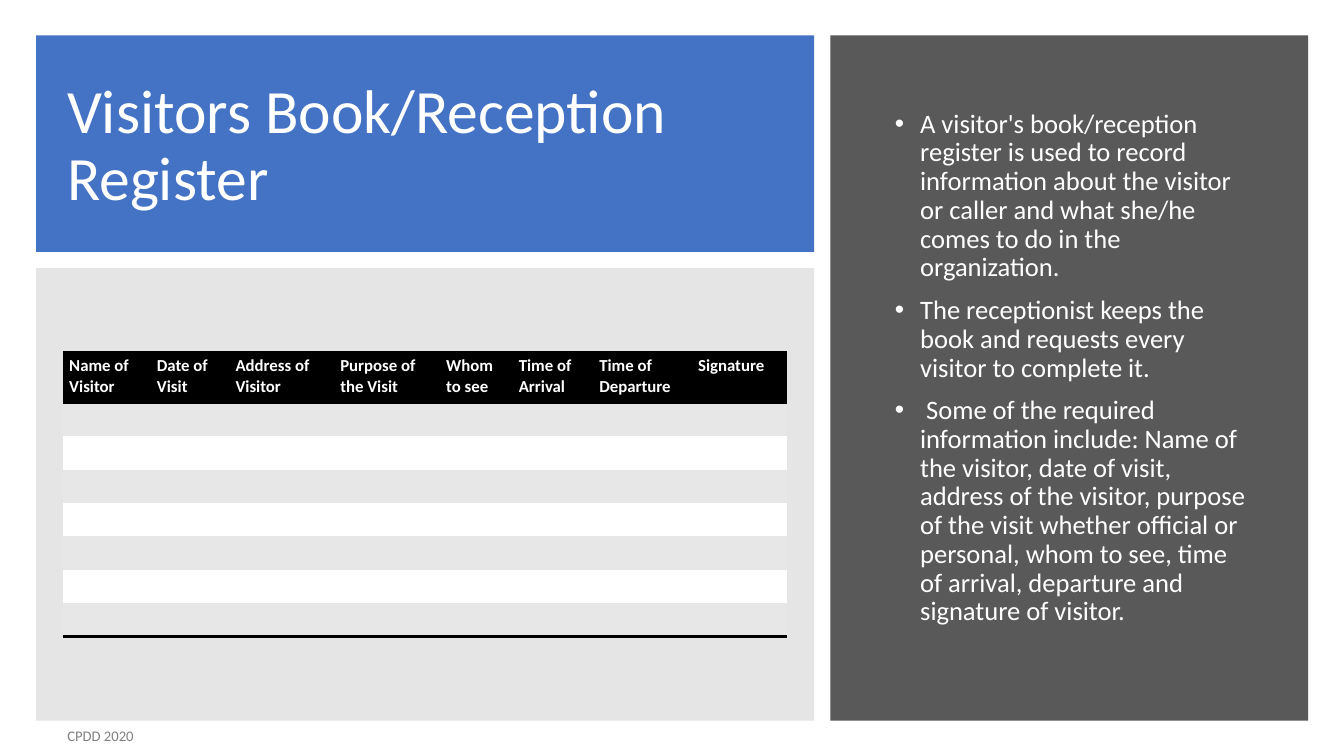
import lxml.etree
import pptx
import pptx.dml.color
import pptx.enum.shapes
import pptx.enum.text
import pptx.oxml.ns
import pptx.util

Cm = pptx.util.Cm
Pt = pptx.util.Pt
qn = pptx.oxml.ns.qn

COLORS = {"blue": "4472C4", "panel": "7F7F7F", "dark": "595959", "white": "FFFFFF",
          "black": "000000", "band": "E7E7E7", "footer": "808080"}
FONT = "Calibri"
NO_STYLE = "{2D5ABB26-0587-4C30-8999-92F81FD0307C}"

COLUMNS = [("Name of Visitor", 2.21), ("Date of Visit", 1.98), ("Address of Visitor", 2.64),
           ("Purpose of the Visit", 2.67), ("Whom to see", 1.83), ("Time of Arrival", 2.03),
           ("Time of Departure", 2.49), ("Signature", 2.41)]
EMPTY_ROWS = 7
HEADER_HEIGHT, ROW_HEIGHT = 1.27, 0.84

POINTS = [
    "A visitor's book/reception register is used to record information about the visitor or caller "
    "and what she/he comes to do in the organization.",
    "The receptionist keeps the book and requests every visitor to complete it.",
    " Some of the required information include: Name of the visitor, date of visit, address of the "
    "visitor, purpose of the visit whether official or personal, whom to see, time of arrival, "
    "departure and signature of visitor.",
]


def rgb(name):
    """Return the named colour."""
    return pptx.dml.color.RGBColor.from_string(COLORS[name])


def set_font(paragraph, size, color, bold=False):
    """Set the font of a whole paragraph."""
    font = paragraph.font
    font.name, font.size, font.bold = FONT, Pt(size), bold
    font.color.rgb = rgb(color)


def add_panel(slide, box, color, opacity=100):
    """Fill the box with a plain rectangle."""
    shape = slide.shapes.add_shape(pptx.enum.shapes.MSO_SHAPE.RECTANGLE, *map(Cm, box))
    shape.shadow.inherit = False
    shape.fill.solid()
    shape.fill.fore_color.rgb = rgb(color)
    shape.line.fill.background()
    if opacity < 100:
        fill_color = shape.fill._xPr.find(qn("a:solidFill"))[0]
        lxml.etree.SubElement(fill_color, qn("a:alpha"), val=str(opacity * 1000))


def add_text(slide, box, texts, size, color):
    """Add a wrapped, vertically centred text box and return its paragraphs."""
    frame = slide.shapes.add_textbox(*map(Cm, box)).text_frame
    frame.word_wrap = True
    frame.vertical_anchor = pptx.enum.text.MSO_ANCHOR.MIDDLE
    frame.text = "\n".join(texts)
    for paragraph in frame.paragraphs:
        set_font(paragraph, size, color)
    return frame.paragraphs


def add_title(slide, box):
    """Draw the blue title region."""
    left, top, width, height = box
    add_panel(slide, box, "blue")
    text_box = (left + 0.53, top + 0.56, width - 1.3, height - 0.94)
    paragraph, = add_text(slide, text_box, ["Visitors Book/Reception Register"], 44, "white")
    paragraph.line_spacing = 0.9


def add_border(cell, side, position):
    """Draw a black rule on one side of a cell."""
    line = lxml.etree.Element(qn(f"a:ln{side}"), w=str(Pt(2)))
    fill = lxml.etree.SubElement(line, qn("a:solidFill"))
    lxml.etree.SubElement(fill, qn("a:srgbClr"), val=COLORS["black"])
    cell._tc.get_or_add_tcPr().insert(position, line)


def add_register(slide, box):
    """Draw the grey region with the register table."""
    left, top, width, height = box
    add_panel(slide, box, "panel", 20)
    table_height = HEADER_HEIGHT + EMPTY_ROWS * ROW_HEIGHT
    table_width = sum(column_width for _, column_width in COLUMNS)
    table = slide.shapes.add_table(
        EMPTY_ROWS + 1, len(COLUMNS), Cm(left + (width - table_width) / 2),
        Cm(top + (height - table_height) / 2), Cm(table_width), Cm(table_height)).table
    table._tbl.tblPr.find(qn("a:tableStyleId")).text = NO_STYLE
    table.horz_banding = False
    for column, (_, column_width) in zip(table.columns, COLUMNS):
        column.width = Cm(column_width)
    for index, row in enumerate(table.rows):
        row.height = Cm(ROW_HEIGHT if index else HEADER_HEIGHT)
        fill = ("white" if index % 2 == 0 else "band") if index else "black"
        for cell, (heading, _) in zip(row.cells, COLUMNS):
            cell.margin_left = cell.margin_right = Cm(0.16)
            cell.margin_top = cell.margin_bottom = Cm(0.08)
            cell.fill.solid()
            cell.fill.fore_color.rgb = rgb(fill)
            if index == 0:
                cell.text = heading
                add_border(cell, "T", 0)
                add_border(cell, "B", 1)
            elif index == EMPTY_ROWS:
                add_border(cell, "B", 0)
            set_font(cell.text_frame.paragraphs[0], 12, "black" if index else "white", not index)


def add_points(slide, box):
    """Draw the dark region with the bulleted explanation."""
    left, top, width, height = box
    add_panel(slide, box, "dark")
    text_box = (left + 1.37, top + 1.65, 9.53, 13.49)
    for paragraph in add_text(slide, text_box, POINTS, 19, "white"):
        paragraph.line_spacing = 0.9
        paragraph.space_before = Pt(10)
        properties = paragraph._p.get_or_add_pPr()
        properties.set("marL", str(Cm(0.64)))
        properties.set("indent", str(-Cm(0.64)))
        bullet_font = lxml.etree.Element(qn("a:buFont"), typeface="Arial")
        bullet = lxml.etree.Element(qn("a:buChar"), char="•")
        properties.find(qn("a:defRPr")).addprevious(bullet_font)
        bullet_font.addnext(bullet)


def add_footer(slide, box):
    """Write the footer line."""
    paragraph, = add_text(slide, box, ["CPDD 2020"], 10.5, "footer")
    paragraph.space_after = Pt(6)


def main():
    """Build and save the slide."""
    presentation = pptx.Presentation()
    presentation.slide_width, presentation.slide_height = Cm(33.87), Cm(19.05)
    slide = presentation.slides.add_slide(presentation.slide_layouts[6])
    add_title(slide, (0.91, 0.89, 19.61, 5.46))
    add_register(slide, (0.91, 6.76, 19.61, 11.4))
    add_points(slide, (20.93, 0.89, 12.04, 17.27))
    add_footer(slide, (1.45, 18.16, 18.31, 0.76))
    presentation.save("out.pptx")


if __name__ == "__main__":
    main()
